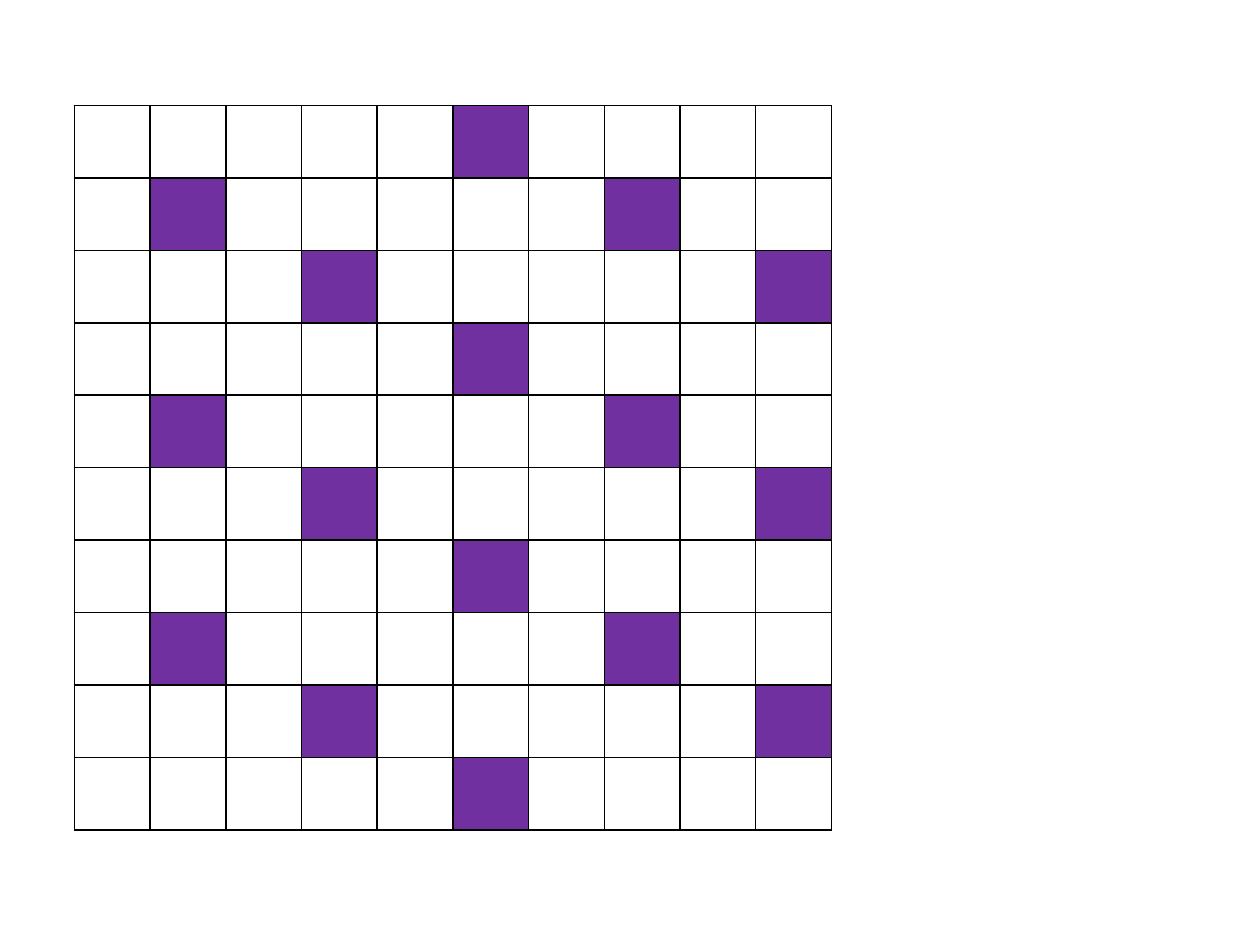
import pptx
import pptx.dml.color
import pptx.oxml
import pptx.oxml.ns
import pptx.util

PAGE_SIZE = {"slide_width": pptx.util.Pt(720), "slide_height": pptx.util.Pt(540)}
PLAIN_TABLE = {"first_row": False, "horz_banding": False}
GRID_COUNT = 10
GRID_LEFT, GRID_TOP = 42.5, 60.3
CELL_WIDTH, CELL_HEIGHT = 43.28, 41.4
MARKED_COLUMNS = [(5,), (1, 7), (3, 9)]
MARKED, EMPTY, BORDER = "7030A0", "FFFFFF", "000000"


def color(value):
    return pptx.dml.color.RGBColor.from_string(value)


def apply_format(target, values):
    for name, value in values.items():
        setattr(target, name, value)


def add_borders(cell, value, width):
    properties = cell._tc.get_or_add_tcPr()
    for side in ("lnL", "lnR", "lnT", "lnB"):
        properties.append(pptx.oxml.parse_xml(
            f'<a:{side} {pptx.oxml.ns.nsdecls("a")} w="{pptx.util.Pt(width)}">'
            f'<a:solidFill><a:srgbClr val="{color(value)}"/></a:solidFill>'
            f'<a:prstDash val="solid"/></a:{side}>'))


def fill_cell(cell, value):
    cell.fill.solid()
    cell.fill.fore_color.rgb = color(value)


def add_grid(page):
    lengths = (GRID_LEFT, GRID_TOP, GRID_COUNT * CELL_WIDTH, GRID_COUNT * CELL_HEIGHT)
    frame = page.shapes.add_table(GRID_COUNT, GRID_COUNT, *map(pptx.util.Pt, lengths))
    table = frame.table
    apply_format(table, PLAIN_TABLE)
    for column in table.columns:
        column.width = pptx.util.Pt(CELL_WIDTH)
    for row_index, row in enumerate(table.rows):
        row.height = pptx.util.Pt(CELL_HEIGHT)
        marked = MARKED_COLUMNS[row_index % len(MARKED_COLUMNS)]
        for column_index, cell in enumerate(row.cells):
            add_borders(cell, BORDER, 1)
            fill_cell(cell, MARKED if column_index in marked else EMPTY)


def main():
    deck = pptx.Presentation()
    apply_format(deck, PAGE_SIZE)
    page = deck.slides.add_slide(deck.slide_layouts[6])
    add_grid(page)
    deck.save("out.pptx")


if __name__ == "__main__":
    main()
